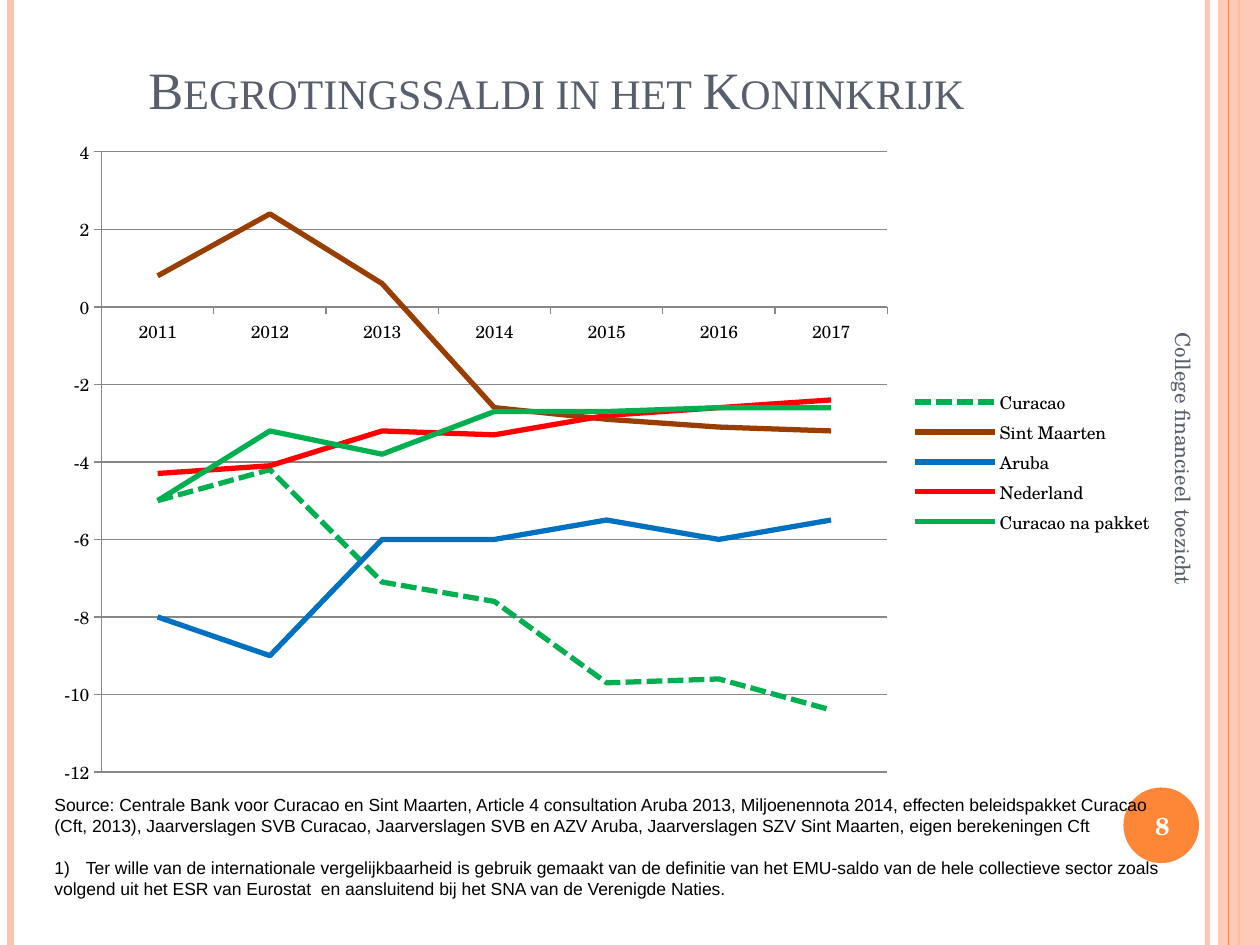
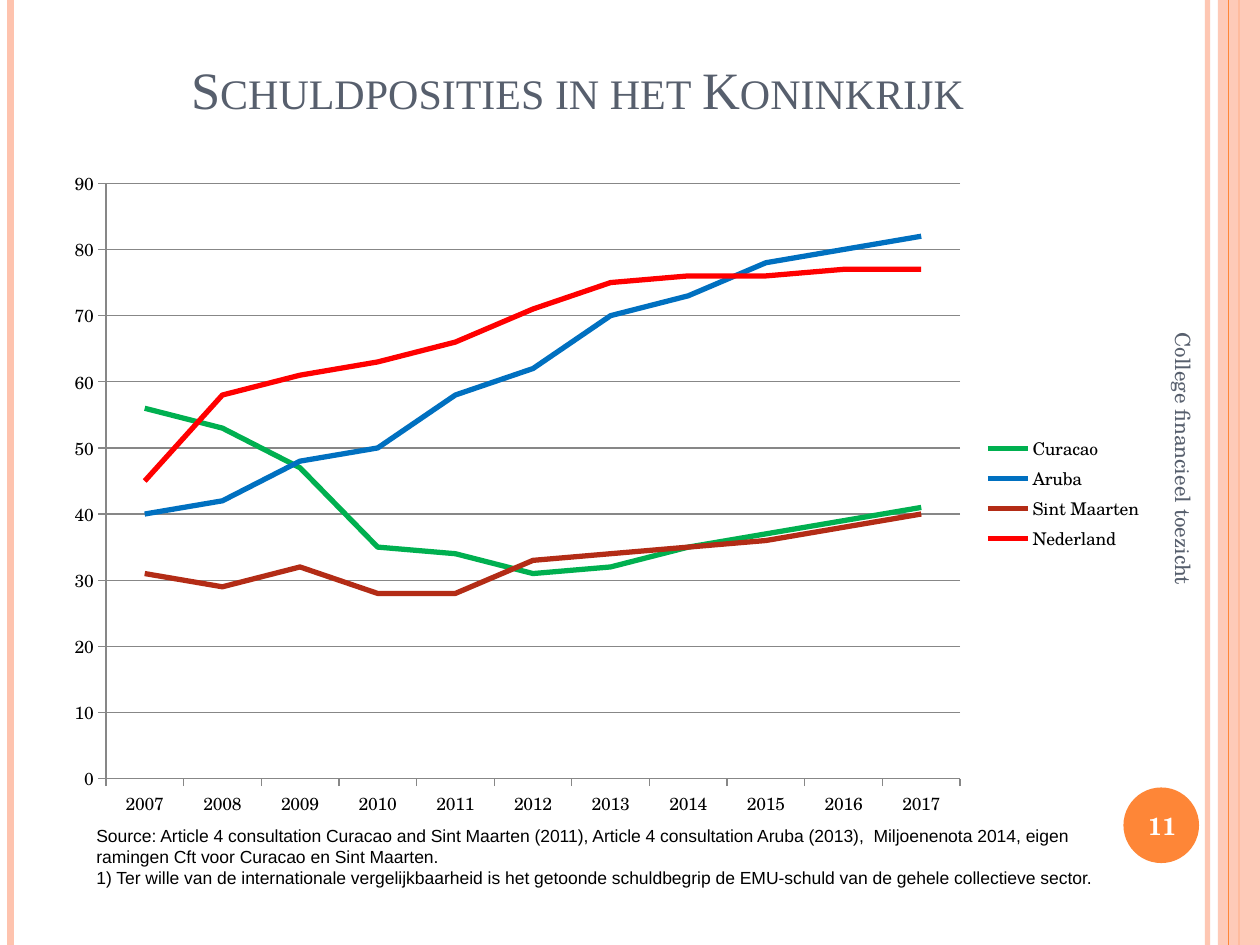
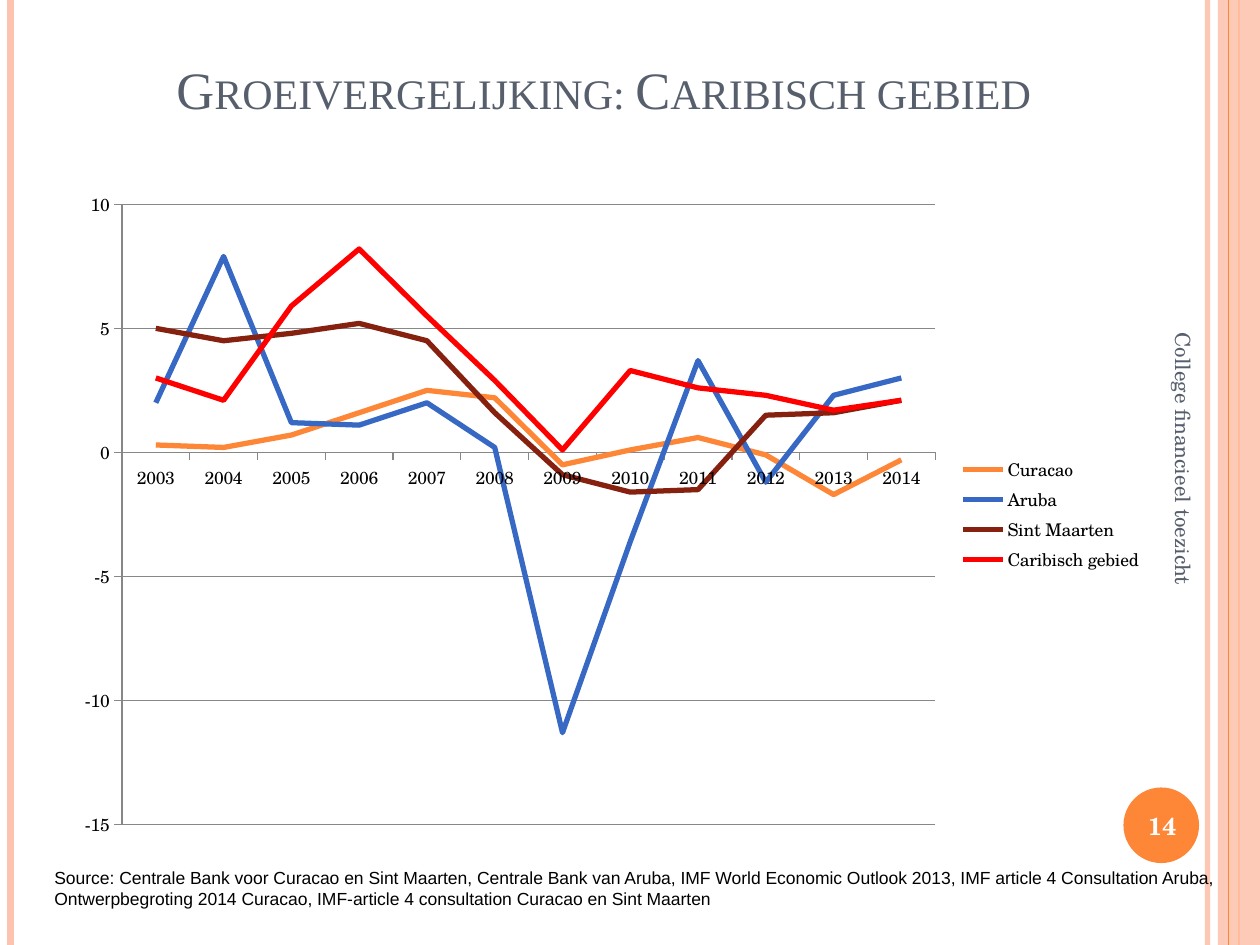
from lxml.etree import SubElement
from pptx import Presentation
from pptx.chart.data import CategoryChartData
from pptx.dml.color import RGBColor
from pptx.enum.chart import XL_CHART_TYPE as ChartType, XL_LEGEND_POSITION as LegendPos
from pptx.enum.chart import XL_TICK_MARK as Tick
from pptx.enum.dml import MSO_LINE as Dash
from pptx.enum.shapes import MSO_CONNECTOR as Connector, MSO_SHAPE as Shape
from pptx.enum.text import MSO_ANCHOR as Anchor, PP_ALIGN as Align
from pptx.oxml.ns import qn
from pptx.util import Inches, Pt

# Grid: twelve cells to the inch
COLS, ROWS = 120, 90

BLACK = RGBColor(0x00, 0x00, 0x00)
WHITE = RGBColor(0xFF, 0xFF, 0xFF)
SLATE = RGBColor(0x57, 0x5F, 0x6D)
GREY = RGBColor(0x87, 0x87, 0x87)
PEACH = RGBColor(0xFE, 0xC3, 0xAE)
ORANGE = RGBColor(0xFE, 0x86, 0x37)
GREEN = RGBColor(0x00, 0xB0, 0x50)
BLUE = RGBColor(0x00, 0x70, 0xC0)
ROYAL = RGBColor(0x36, 0x68, 0xC4)
RED = RGBColor(0xFF, 0x00, 0x00)
BROWN = RGBColor(0x9A, 0x3D, 0x01)
BRICK = RGBColor(0xB3, 0x2C, 0x16)
MAROON = RGBColor(0x86, 0x21, 0x10)

TITLE_FONT, BODY_FONT, NOTE_FONT = "Times New Roman", "TeX Gyre Schola", "Arial"


def cells(*counts):
    return [Inches(count / 12) for count in counts]


def set_alpha(element, percent):
    for color in element.iter(qn("a:srgbClr")):
        SubElement(color, qn("a:alpha"), val=str(percent * 1000))


# Shared frame
def add_stripe(slide, col, color, width, alpha=None):
    x, bottom = cells(col, ROWS)
    stripe = slide.shapes.add_connector(Connector.STRAIGHT, x, 0, x, bottom)
    stripe.line.color.rgb = color
    stripe.line.width = Pt(width)
    properties = stripe._element.spPr
    if alpha:
        set_alpha(properties, alpha)
    SubElement(properties, qn("a:effectLst"))


def add_filled(slide, kind, box, color, alpha=None):
    shape = slide.shapes.add_shape(kind, *cells(*box))
    shape.shadow.inherit = False
    shape.fill.solid()
    shape.fill.fore_color.rgb = color
    shape.line.fill.background()
    if alpha:
        set_alpha(shape._element.spPr, alpha)


def add_frame(slide, number):
    add_stripe(slide, 115, PEACH, 3, alpha=93)
    add_stripe(slide, 1, PEACH, 4.5)
    add_stripe(slide, 118, ORANGE, 1.5)
    add_filled(slide, Shape.RECTANGLE, (116, 0, 4, ROWS), PEACH, alpha=87)
    add_stripe(slide, 117, ORANGE, 0.75)
    add_filled(slide, Shape.OVAL, (107, 75, 7.2, 7.2), ORANGE)
    add_text(slide, (106.7, 75.2, 8, 6.8), [number], BODY_FONT, 14, WHITE,
             Anchor.MIDDLE, Align.CENTER, bold=True)
    footer = add_text(slide, (91.7, 49.1, 42, 4.8), ["College financieel toezicht"],
                      BODY_FONT, 12, SLATE, Anchor.MIDDLE)
    footer.rotation = 90


# Text
def add_text(slide, box, lines, font, size, color, anchor=Anchor.TOP,
             align=Align.LEFT, bold=False):
    holder = slide.shapes.add_textbox(*cells(*box))
    frame = holder.text_frame
    frame.word_wrap = True
    frame.vertical_anchor = anchor
    for index, line in enumerate(lines):
        paragraph = frame.paragraphs[0] if index == 0 else frame.add_paragraph()
        paragraph.alignment = align
        run = paragraph.add_run()
        run.text = line
        run.font.name, run.font.size, run.font.bold = font, Pt(size), bold
        run.font.color.rgb = color
    return holder


def add_title(slide, col, width, text):
    title = add_text(slide, (col, 3.6, width, 8.4), [text], TITLE_FONT, 30, SLATE,
                     Anchor.BOTTOM, Align.CENTER)
    run = title.text_frame.paragraphs[0].runs[0]
    run.font._element.set("cap", "small")


def add_source(slide, box, lines):
    return add_text(slide, box, lines, NOTE_FONT, 10, BLACK)


def number_paragraph(paragraph):
    paragraph.space_before = Pt(12)
    properties = paragraph._p.get_or_add_pPr()
    indent = Inches(0.25)
    properties.set("marL", str(indent))
    properties.set("indent", str(-indent))
    SubElement(properties, qn("a:buFont"), typeface=NOTE_FONT)
    SubElement(properties, qn("a:buAutoNum"), type="arabicParenR")


# Charts
def add_line_chart(slide, box, years, countries, dashed=()):
    data = CategoryChartData()
    data.categories = [str(year) for year in years]
    for country, _, values in countries:
        data.add_series(country, values)
    chart = slide.shapes.add_chart(ChartType.LINE, *cells(*box), data).chart
    chart.has_title = False
    chart.font.name, chart.font.size = BODY_FONT, Pt(10)
    chart.font.color.rgb = BLACK
    chart.has_legend = True
    chart.legend.position = LegendPos.RIGHT
    chart.legend.include_in_layout = False
    chart.plots[0].vary_by_categories = False

    value_axis = chart.value_axis
    value_axis.has_major_gridlines = True
    for axis in (chart.category_axis, value_axis):
        axis.major_tick_mark, axis.minor_tick_mark = Tick.OUTSIDE, Tick.NONE
    for part in (chart.category_axis, value_axis, value_axis.major_gridlines):
        part.format.line.color.rgb = GREY
        part.format.line.width = Pt(0.75)

    for series, (country, color, _) in zip(chart.plots[0].series, countries):
        series.smooth = False
        line = series.format.line
        line.color.rgb = color
        line.width = Pt(3)
        if country in dashed:
            line.dash_style = Dash.SQUARE_DOT
    return chart


def set_scale(chart, low, high, step):
    axis = chart.value_axis
    axis.minimum_scale, axis.maximum_scale, axis.major_unit = low, high, step


# Slides
def build_balances(slide):
    add_title(slide, 4, 98, "Begrotingssaldi in het Koninkrijk")
    source = add_source(slide, (4, 75, 110, 11.3), [
        "Source: Centrale Bank voor Curacao en Sint Maarten, Article 4 consultation Aruba 2013, "
        "Miljoenennota 2014, effecten beleidspakket Curacao",
        "(Cft, 2013), Jaarverslagen SVB Curacao, Jaarverslagen SVB en AZV Aruba, "
        "Jaarverslagen SZV Sint Maarten, eigen berekeningen Cft",
        "Ter wille van de internationale vergelijkbaarheid is gebruik gemaakt van de definitie "
        "van het EMU-saldo van de hele collectieve sector zoals",
        "volgend uit het ESR van Eurostat  en aansluitend bij het SNA van de Verenigde Naties.",
    ])
    number_paragraph(source.text_frame.paragraphs[2])
    chart = add_line_chart(slide, (4, 12, 107, 64), range(2011, 2018), [
        ("Curacao", GREEN, (-5, -4.2, -7.1, -7.6, -9.7, -9.6, -10.4)),
        ("Sint Maarten", BROWN, (0.8, 2.4, 0.6, -2.6, -2.9, -3.1, -3.2)),
        ("Aruba", BLUE, (-8, -9, -6, -6, -5.5, -6, -5.5)),
        ("Nederland", RED, (-4.3, -4.1, -3.2, -3.3, -2.8, -2.6, -2.4)),
        ("Curacao na pakket", GREEN, (-5, -3.2, -3.8, -2.7, -2.7, -2.6, -2.6)),
    ], dashed=("Curacao",))
    set_scale(chart, -12, 4, 2)


def build_debts(slide):
    add_title(slide, 6, 98, "Schuldposities in het Koninkrijk")
    chart = add_line_chart(slide, (5, 15, 105, 64), range(2007, 2018), [
        ("Curacao", GREEN, (56, 53, 47, 35, 34, 31, 32, 35, 37, 39, 41)),
        ("Aruba", BLUE, (40, 42, 48, 50, 58, 62, 70, 73, 78, 80, 82)),
        ("Sint Maarten", BRICK, (31, 29, 32, 28, 28, 33, 34, 35, 36, 38, 40)),
        ("Nederland", RED, (45, 58, 61, 63, 66, 71, 75, 76, 76, 77, 77)),
    ])
    set_scale(chart, 0, 90, 10)
    add_source(slide, (8, 78, 101, 7.3), [
        "Source: Article 4 consultation Curacao and Sint Maarten (2011), Article 4 consultation "
        "Aruba (2013),  Miljoenenota 2014, eigen ramingen Cft voor Curacao en Sint Maarten.",
        "1) Ter wille van de internationale vergelijkbaarheid is het getoonde schuldbegrip de "
        "EMU-schuld van de gehele collectieve sector.",
    ])


def build_growth(slide):
    add_title(slide, 6, 103, "Groeivergelijking: Caribisch gebied")
    add_source(slide, (4, 82, 114, 5.3), [
        "Source: Centrale Bank voor Curacao en Sint Maarten, Centrale Bank van Aruba, "
        "IMF World Economic Outlook 2013, IMF article 4 Consultation Aruba,",
        "Ontwerpbegroting 2014 Curacao, IMF-article 4 consultation Curacao en Sint Maarten",
    ])
    chart = add_line_chart(slide, (6, 17, 104, 64), range(2003, 2015), [
        ("Curacao", ORANGE, (0.3, 0.2, 0.7, 1.6, 2.5, 2.2, -0.5, 0.1, 0.6, -0.1, -1.7, -0.3)),
        ("Aruba", ROYAL, (2, 7.9, 1.2, 1.1, 2, 0.2, -11.3, -3.6, 3.7, -1.2, 2.3, 3)),
        ("Sint Maarten", MAROON, (5, 4.5, 4.8, 5.2, 4.5, 1.6, -0.9, -1.6, -1.5, 1.5, 1.6, 2.1)),
        ("Caribisch gebied", RED, (3, 2.1, 5.9, 8.2, 5.5, 2.9, 0.1, 3.3, 2.6, 2.3, 1.7, 2.1)),
    ])
    set_scale(chart, -15, 10, 5)


def main():
    deck = Presentation()
    deck.slide_width, deck.slide_height = cells(COLS, ROWS)
    blank = deck.slide_layouts[6]
    for number, build in (("8", build_balances), ("11", build_debts), ("14", build_growth)):
        slide = deck.slides.add_slide(blank)
        add_frame(slide, number)
        build(slide)
    deck.save("out.pptx")


if __name__ == "__main__":
    main()
